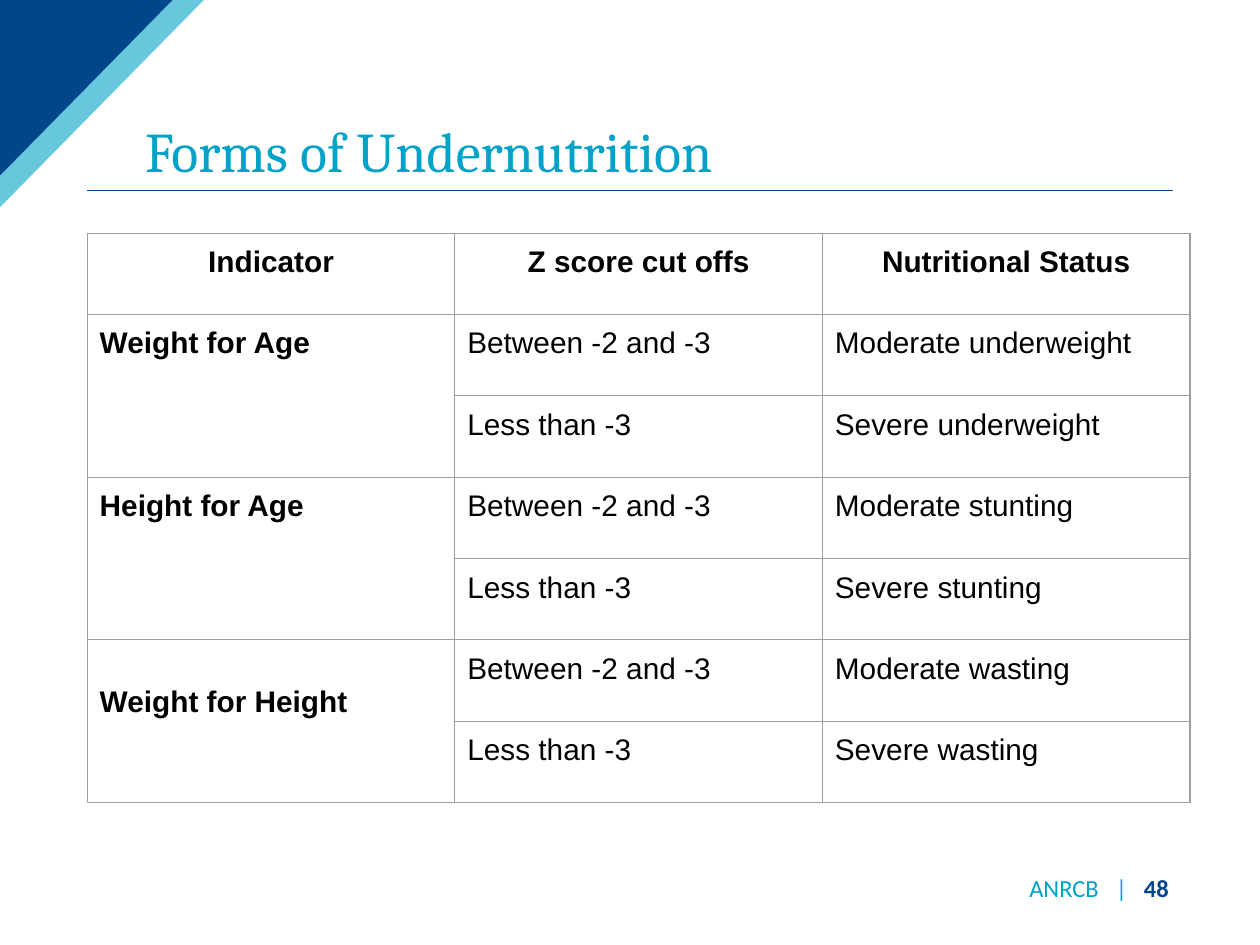
from lxml import etree
from pptx import Presentation
from pptx.dml.color import RGBColor
from pptx.enum import shapes, text
from pptx.oxml import ns
from pptx.util import Cm, Pt

NAVY = "00468B"
CYAN = "00A2C7"
BLACK = "000000"
GREY = "9E9E9E"
HEADINGS = ["Indicator", "Z score cut offs", "Nutritional Status"]
CUT_OFFS = ["Between -2 and -3", "Less than -3"]
DEGREES = ["Moderate", "Severe"]
INDICATORS = [
    ("Weight for Age", "underweight", 0.25),
    ("Height for Age", "stunting", 0.25),
    ("Weight for Height", "wasting", 0.92),
]


def colour(value):
    return RGBColor.from_string(value)


def add_node(parent, tag, **attributes):
    return etree.SubElement(parent, ns.qn(tag), attributes)


def style_font(font, name, size, shade, bold=False):
    font.name = name
    font.size = Pt(size)
    font.color.rgb = colour(shade)
    font.bold = bold


def add_corner(slide, width, height, shade, alpha=None):
    builder = slide.shapes.build_freeform(0, 0, scale=1.0)
    builder.add_line_segments([(Cm(width), 0), (0, Cm(height))], close=True)
    corner = builder.convert_to_shape()
    corner.shadow.inherit = False
    corner.fill.solid()
    corner.fill.fore_color.rgb = colour(shade)
    corner.line.fill.background()
    if alpha:
        tint = corner.fill._xPr.find(".//" + ns.qn("a:srgbClr"))
        add_node(tint, "a:alpha", val=str(alpha * 1000))


def add_rule(slide):
    rule = slide.shapes.add_connector(
        shapes.MSO_CONNECTOR.STRAIGHT, Cm(1.76), Cm(3.84), Cm(23.64), Cm(3.84))
    rule.line.color.rgb = colour(NAVY)
    rule.line.width = Pt(0.75)
    add_node(rule._element.spPr, "a:effectLst")


def fill_title(slide, wording):
    title = slide.shapes.title
    title.left, title.top = Cm(2.67), Cm(0.89)
    title.width, title.height = Cm(20.98), Cm(2.95)
    frame = title.text_frame
    frame.text = wording
    frame.auto_size = text.MSO_AUTO_SIZE.NONE
    frame.vertical_anchor = text.MSO_ANCHOR.BOTTOM
    heading = frame.paragraphs[0]
    heading.alignment = text.PP_ALIGN.LEFT
    heading.line_spacing = 0.9
    style_font(heading.font, "Cambria", 32, CYAN)


def add_footer(slide):
    frame = slide.shapes.add_textbox(Cm(19.63), Cm(17.63), Cm(4.19), Cm(0.53)).text_frame
    frame.word_wrap = True
    frame.vertical_anchor = text.MSO_ANCHOR.MIDDLE
    frame.margin_left, frame.margin_right = Cm(1.12), Cm(0.1)
    line = frame.paragraphs[0]
    tabs = add_node(line._p.get_or_add_pPr(), "a:tabLst")
    for position, alignment in ((1.86, "ctr"), (2.31, "l")):
        add_node(tabs, "a:tab", pos=str(Cm(position)), algn=alignment)
    for wording, shade, bold in (("ANRCB\t|\t", CYAN, False), ("48", NAVY, True)):
        run = line.add_run()
        run.text = wording
        style_font(run.font, "Calibri", 14, shade, bold)


def add_borders(cell):
    properties = cell._tc.get_or_add_tcPr()
    for side in ("a:lnL", "a:lnR", "a:lnT", "a:lnB"):
        border = add_node(properties, side, w=str(Pt(0.75)))
        add_node(add_node(border, "a:solidFill"), "a:srgbClr", val=GREY)


def fill_cell(cell, wording, bold=False, centred=False, top=0.25):
    cell.text = wording
    cell.margin_left = cell.margin_right = cell.margin_bottom = Cm(0.25)
    cell.margin_top = Cm(top)
    label = cell.text_frame.paragraphs[0]
    label.alignment = text.PP_ALIGN.CENTER if centred else text.PP_ALIGN.LEFT
    style_font(label.font, "Arial", 17, BLACK, bold)


def add_indicator_table(slide):
    row_count = 1 + len(INDICATORS) * len(CUT_OFFS)
    table = slide.shapes.add_table(
        row_count, len(HEADINGS), Cm(1.76), Cm(4.7), Cm(22.23), Cm(11.48)).table
    table.first_row = table.horz_banding = False
    for column in table.columns:
        column.width = Cm(7.41)
    for row in table.rows:
        row.height = Cm(1.64)
    for cell in table.iter_cells():
        add_borders(cell)
        cell.fill.background()
    for column, heading in enumerate(HEADINGS):
        fill_cell(table.cell(0, column), heading, bold=True, centred=True)
    for group, (indicator, status, top) in enumerate(INDICATORS):
        first = 1 + group * len(CUT_OFFS)
        table.cell(first, 0).merge(table.cell(first + 1, 0))
        fill_cell(table.cell(first, 0), indicator, bold=True, top=top)
        for row, (cut_off, degree) in enumerate(zip(CUT_OFFS, DEGREES), first):
            fill_cell(table.cell(row, 1), cut_off)
            fill_cell(table.cell(row, 2), f"{degree} {status}")


def main():
    deck = Presentation()
    deck.slide_width, deck.slide_height = Cm(25.4), Cm(19.05)
    slide = deck.slides.add_slide(deck.slide_layouts[5])
    add_rule(slide)
    add_corner(slide, 4.11, 4.18, CYAN, alpha=60)
    add_corner(slide, 3.48, 3.54, NAVY)
    fill_title(slide, "Forms of Undernutrition")
    add_footer(slide)
    add_indicator_table(slide)
    deck.save("out.pptx")


if __name__ == "__main__":
    main()
